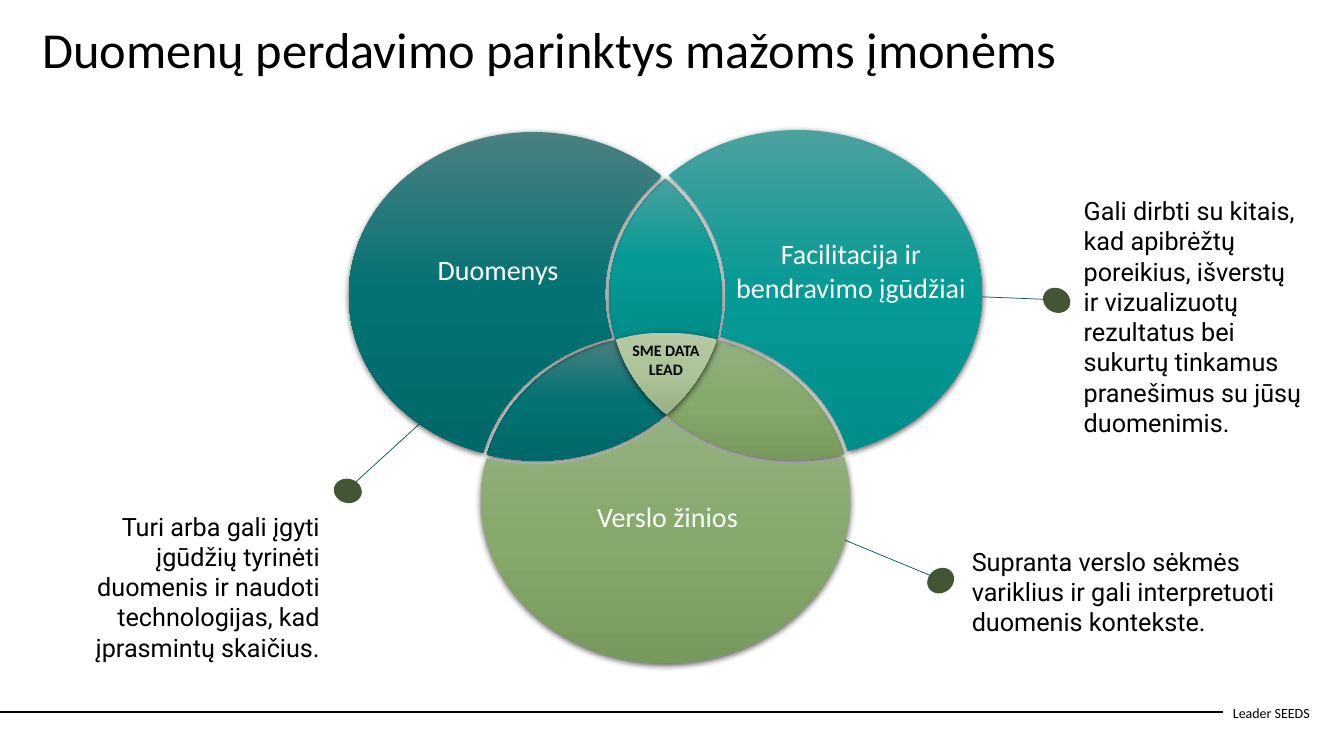
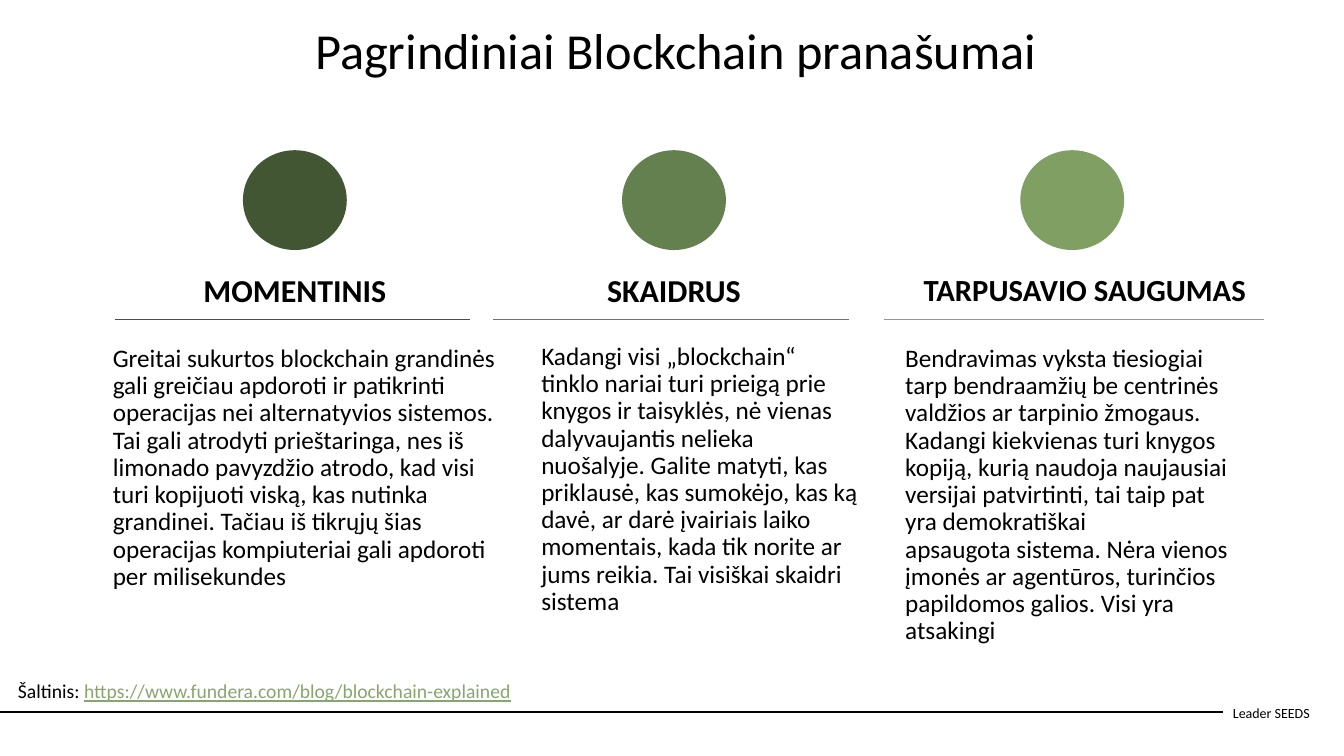
from copy import deepcopy
from math import atan2, ceil, cos, floor, pi, sin, tan

from lxml import etree
from pptx import Presentation
from pptx.dml.color import RGBColor
from pptx.enum.shapes import MSO_CONNECTOR, MSO_SHAPE
from pptx.enum.text import MSO_ANCHOR, PP_ALIGN
from pptx.oxml.ns import qn
from pptx.util import Inches, Pt

STRAIGHT = MSO_CONNECTOR.STRAIGHT
ELLIPSE = MSO_SHAPE.OVAL
LEFT, CENTER, RIGHT = PP_ALIGN.LEFT, PP_ALIGN.CENTER, PP_ALIGN.RIGHT
TOP, MIDDLE = MSO_ANCHOR.TOP, MSO_ANCHOR.MIDDLE
NO_BREAK = chr(160)

WIDTH, HEIGHT = 13.33, 7.5
COLORS = {
    "black": "000000",
    "white": "FFFFFF",
    "leader": "085156",
    "forest": "435634",
    "moss": "65804F",
    "leaf": "80A063",
    "link": "87A66E",
}
GRADIENTS = {
    "petrol": ("4B8081", "037273", "006869"),
    "teal": ("4BA19E", "069A96", "008E8B"),
    "green": ("94B080", "87A96B", "77995C"),
    "pale": ("B6C8A5", "ACC397", "99B084"),
}

RADIUS_X, RADIUS_Y = 1.83, 1.62
CIRCLES = {"data": (1.87, 1.66), "skills": (4.41, 1.65), "business": (3.14, 3.63)}
CORNERS = {
    "top": (3.14, 0.48),
    "left": (1.37, 3.22),
    "right": (4.91, 3.21),
    "inner_left": (2.65, 2.08),
    "inner_right": (3.65, 2.08),
    "inner_low": (3.15, 2.82),
}
REGIONS = [
    ("teal", (0, 0), [("top", "data", "inner_right"), ("inner_right", "business", "inner_left"),
                      ("inner_left", "skills", "top")]),
    ("petrol", (0, 0), [("inner_left", "skills", "inner_low"), ("inner_low", "data", "left"),
                        ("left", "business", "inner_left")]),
    ("green", (0, 0), [("inner_right", "business", "right"), ("right", "skills", "inner_low"),
                       ("inner_low", "data", "inner_right")]),
    ("teal", (0.04, -0.03), [("top", "data", "inner_right"), ("inner_right", "business", "right"),
                             ("right", "skills", "top")]),
    ("petrol", (-0.04, -0.02), [("top", "skills", "inner_left"), ("inner_left", "business", "left"),
                                ("left", "data", "top")]),
    ("pale", (0, 0), [("inner_left", "business", "inner_right"), ("inner_right", "data", "inner_low"),
                      ("inner_low", "skills", "inner_left")]),
    ("green", (0, 0.04), [("left", "business", "right"), ("right", "skills", "inner_low"),
                          ("inner_low", "data", "left")]),
]
OUTER_ARCS = {("right", "skills", "top"), ("left", "data", "top"), ("left", "business", "right")}

VENN_LABELS = [
    ("Duomenys", (0.48, 1.17, 2, 0.44), {}),
    ("Facilitacija ir bendravimo įgūdžiai", (3.67, 1.01, 2.62, 0.77), {}),
    ("Verslo žinios", (2.2, 3.62, 1.92, 0.44), {}),
    ("SME DATA LEAD", (2.54, 2.04, 1.21, 0.53), {"size": 11.4, "color": "black", "bold": True}),
]
CALLOUTS = [
    {"text": "Turi arba gali įgyti įgūdžių tyrinėti duomenis ir naudoti technologijas, "
             "kad įprasmintų skaičius.",
     "box": (0.32, 5.02, 2.95, 1.62), "align": RIGHT,
     "line": (4.21, 4.16, 3.52, 4.79), "dot": (3.45, 4.87), "rotation": 15},
    {"text": "Supranta verslo sėkmės variklius ir gali interpretuoti duomenis kontekste.",
     "box": (9.54, 5.37, 3.23, 1.01), "align": LEFT,
     "line": (8.36, 5.35, 9.23, 5.71), "dot": (9.33, 5.76), "rotation": -35},
    {"text": "Gali dirbti su kitais, kad apibrėžtų poreikius, išverstų ir vizualizuotų "
             "rezultatus bei sukurtų tinkamus pranešimus su jūsų duomenimis.",
     "box": (10.65, 1.89, 2.36, 2.52), "align": LEFT,
     "line": (9.37, 2.93, 10.37, 2.97), "dot": (10.48, 2.98), "rotation": 29},
]
BENEFITS = [
    {"box": (1.14, 1.49, 3.52, 4.5), "circle": 1.27, "heading": (0.11, 3.35),
     "body": (-0.12, 1.89, 4.02), "title": "MOMENTINIS", "size": 22.8,
     "fill": "forest", "rule": "forest", "weight": 1.25,
     "text": "Greitai sukurtos blockchain grandinės gali greičiau apdoroti ir patikrinti "
             "operacijas nei alternatyvios sistemos. Tai gali atrodyti prieštaringa, nes iš "
             "limonado pavyzdžio atrodo, kad visi turi kopijuoti viską, kas nutinka grandinei. "
             "Tačiau iš tikrųjų šias operacijas kompiuteriai gali apdoroti per milisekundes"},
    {"box": (4.89, 1.49, 3.53, 4.5), "circle": 1.28, "heading": (0.12, 3.35),
     "body": (0.38, 1.87, 3.35), "title": "SKAIDRUS", "size": 22.8,
     "fill": "moss", "rule": "moss", "weight": 0.5,
     "text": "Kadangi visi „blockchain“ tinklo nariai turi prieigą prie "
             f"knygos{NO_BREAK}ir{NO_BREAK}taisyklės, nė vienas dalyvaujantis nelieka "
             "nuošalyje. Galite matyti, kas priklausė, kas sumokėjo, kas ką davė, "
             f"ar{NO_BREAK}darė{NO_BREAK}įvairiais laiko momentais, kada tik norite ar jums "
             "reikia. Tai visiškai skaidri sistema"},
    {"box": (8.77, 1.49, 3.77, 4.5), "circle": 1.35, "heading": (0.19, 3.6),
     "body": (0.11, 1.89, 3.53), "title": "TARPUSAVIO SAUGUMAS", "size": 21.9,
     "fill": "leaf", "rule": "link", "weight": 0.5,
     "text": "Bendravimas vyksta tiesiogiai tarp bendraamžių be centrinės valdžios ar tarpinio "
             "žmogaus. Kadangi kiekvienas turi knygos kopiją, kurią naudoja naujausiai versijai "
             f"patvirtinti, tai taip pat yra{NO_BREAK}demokratiškai apsaugota{NO_BREAK}sistema. "
             "Nėra vienos įmonės ar agentūros, turinčios papildomos galios. Visi yra atsakingi"},
]


def rgb(name):
    """Return the palette colour of that name."""
    return RGBColor.from_string(COLORS[name])


def add_text(slide, box, text, size=18, color="black", font="Calibri", bold=False,
             align=LEFT, anchor=TOP, spacing=1.0):
    """Add a text box holding one string or several (text, colour, underline) runs."""
    shape = slide.shapes.add_textbox(*map(Inches, box))
    frame = shape.text_frame
    frame.word_wrap = True
    frame.vertical_anchor = anchor
    paragraph = frame.paragraphs[0]
    paragraph.alignment = align
    paragraph.line_spacing = spacing
    runs = [(text, color, False)] if isinstance(text, str) else text
    for words, run_color, underline in runs:
        run = paragraph.add_run()
        run.text = words
        run.font.name = font
        run.font.size = Pt(size)
        run.font.bold = bold
        run.font.underline = underline
        run.font.color.rgb = rgb(run_color)
    return shape


def add_line(slide, ends, color, weight):
    """Add a straight line without shadow."""
    line = slide.shapes.add_connector(STRAIGHT, *map(Inches, ends))
    line.line.color.rgb = rgb(color)
    line.line.width = Pt(weight)
    etree.SubElement(line._element.spPr, qn("a:effectLst"))
    return line


def add_ellipse(slide, box, color, rotation=0):
    """Add a plain filled ellipse."""
    shape = slide.shapes.add_shape(ELLIPSE, *map(Inches, box))
    shape.shadow.inherit = False
    shape.fill.solid()
    shape.fill.fore_color.rgb = rgb(color)
    shape.line.fill.background()
    shape.rotation = rotation


def move_footer_to_layout(slide):
    """Draw the footer once and hand it to the layout of the slide."""
    footer = [
        add_text(slide, (12.13, 6.87, 1.01, 0.4), "Leader SEEDS", size=10, anchor=MIDDLE),
        add_line(slide, (0, 7.06, 12.13, 7.06), "black", 1.5),
    ]
    for shape in footer:
        slide.slide_layout.shapes._spTree.append(shape._element)


def add_base(presentation, title, box, **format):
    """Add a blank slide with its title."""
    slide = presentation.slides.add_slide(presentation.slide_layouts[6])
    add_text(slide, box, title, size=36, **format)
    return slide


def arc_curves(start, circle, end):
    """Return cubic control points along a circle, split at its extremes."""
    center_x, center_y = CIRCLES[circle]
    first, last = (atan2((CORNERS[name][1] - center_y) / RADIUS_Y,
                         (CORNERS[name][0] - center_x) / RADIUS_X) for name in (start, end))
    sweep = (last - first + pi) % (2 * pi) - pi
    if (start, circle, end) in OUTER_ARCS:
        sweep -= 2 * pi if sweep > 0 else -2 * pi
    low, high = sorted((first, first + sweep))
    extremes = [step * pi / 2 for step in range(ceil(2 * low / pi), floor(2 * high / pi) + 1)]
    angles = sorted([low, *extremes, high], reverse=sweep < 0)
    points = []
    for begin, finish in zip(angles, angles[1:]):
        reach = 4 / 3 * tan((finish - begin) / 4)
        for angle, pull in ((begin, reach), (finish, -reach), (finish, 0)):
            points.append((center_x + RADIUS_X * (cos(angle) - pull * sin(angle)),
                           center_y + RADIUS_Y * (sin(angle) + pull * cos(angle))))
    return points[:-1] + [CORNERS[end]]


def curve_outline(shape):
    """Turn each three line segments of an outline into one cubic curve."""
    segments = list(shape._element.iter(qn("a:lnTo")))
    for index in range(0, len(segments), 3):
        curve = etree.Element(qn("a:cubicBezTo"))
        segments[index].addprevious(curve)
        for segment in segments[index:index + 3]:
            curve.append(segment[0])
            segment.getparent().remove(segment)


def style_region(shape, gradient):
    """Give a region its vertical gradient and soft shadow."""
    shape.line.fill.background()
    shape.fill.gradient()
    shape.fill.gradient_angle = 270
    stop_list = shape._element.spPr.find(".//" + qn("a:gsLst"))
    stop_list.insert(1, deepcopy(stop_list[0]))
    for index, stop in enumerate(shape.fill.gradient_stops):
        stop.position = index / 2
        stop.color.rgb = RGBColor.from_string(GRADIENTS[gradient][index])
    shape.shadow.inherit = False
    effects = shape._element.spPr.find(qn("a:effectLst"))
    shadow = etree.SubElement(effects, qn("a:outerShdw"), blurRad=str(Pt(4.5)),
                              dist=str(Pt(1.5)), dir="5400000", rotWithShape="0")
    color = etree.SubElement(shadow, qn("a:srgbClr"), val=COLORS["black"])
    etree.SubElement(color, qn("a:alpha"), val="63000")


def add_venn(slide, left, top):
    """Add the seven regions of the diagram and their labels."""
    for gradient, (shift_x, shift_y), edges in REGIONS:
        outline = [CORNERS[edges[0][0]]] + [point for edge in edges for point in arc_curves(*edge)]
        points = [(Inches(left + shift_x + x), Inches(top + shift_y + y)) for x, y in outline]
        builder = slide.shapes.build_freeform(*points[0])
        builder.add_line_segments(points[1:], close=True)
        region = builder.convert_to_shape()
        curve_outline(region)
        style_region(region, gradient)
    for text, (x, y, width, height), format in VENN_LABELS:
        add_text(slide, (left + x, top + y, width, height), text, align=CENTER,
                 **{"size": 20, "color": "white", **format})


def add_callout(slide, callout):
    """Add a leader line, its dot and the explanation."""
    add_line(slide, callout["line"], "leader", 0.5)
    x, y = callout["dot"]
    add_ellipse(slide, (x - 0.14, y - 0.12, 0.28, 0.24), "forest", callout["rotation"])
    add_text(slide, callout["box"], callout["text"], font="Roboto", align=callout["align"])


def add_benefit(slide, benefit):
    """Add a column with circle, heading, rule and body text."""
    left, top, width, height = benefit["box"]
    heading_x, heading_width = benefit["heading"]
    body_x, body_y, body_width = benefit["body"]
    rule_y = top + 1.68
    add_ellipse(slide, (left + benefit["circle"], top, 1.03, 0.99), benefit["fill"])
    add_text(slide, (left + heading_x, top + 1.19, heading_width, 0.45), benefit["title"],
             size=benefit["size"], bold=True, align=CENTER, spacing=0.9)
    add_line(slide, (left, rule_y, left + width, rule_y), benefit["rule"], benefit["weight"])
    add_text(slide, (left + body_x, top + body_y, body_width, height - body_y),
             benefit["text"], spacing=0.9)


def main():
    """Build and save the presentation."""
    presentation = Presentation()
    presentation.slide_width, presentation.slide_height = Inches(WIDTH), Inches(HEIGHT)
    options = add_base(presentation, "Duomenų perdavimo parinktys mažoms įmonėms",
                       (0.32, 0.13, 12.46, 0.71))
    move_footer_to_layout(options)
    for callout in CALLOUTS:
        add_callout(options, callout)
    add_venn(options, 3.46, 1.29)
    advantages = add_base(presentation, "Pagrindiniai Blockchain pranašumai",
                          (0.91, 0.21, 11.59, 0.88), align=CENTER, spacing=0.9)
    for benefit in BENEFITS:
        add_benefit(advantages, benefit)
    source = [("Šaltinis: ", "black", False),
              ("https://www.fundera.com/blog/blockchain-explained", "link", True)]
    add_text(advantages, (0.08, 6.69, 5.3, 0.34), source, size=14)
    presentation.save("out.pptx")


if __name__ == "__main__":
    main()
